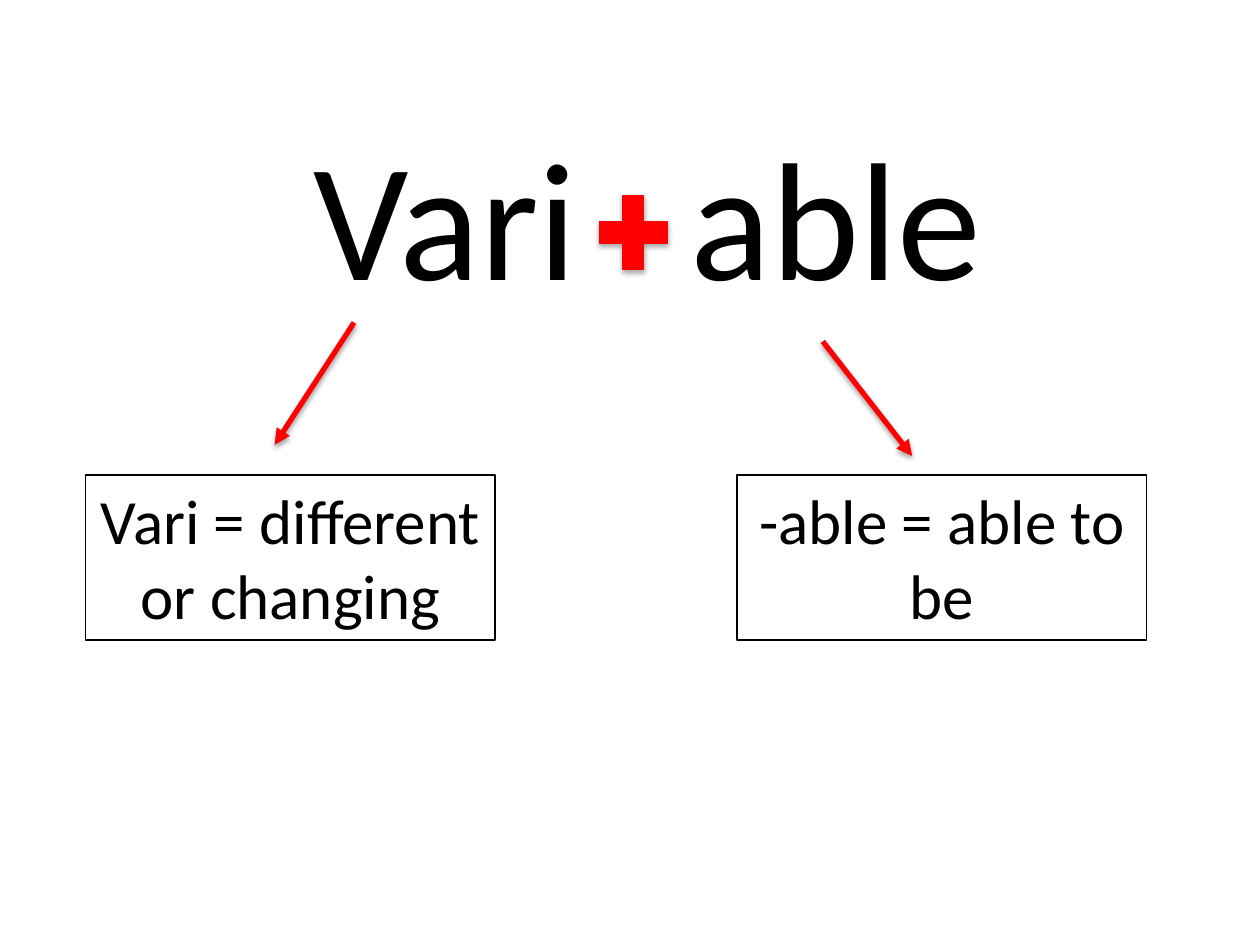
from lxml.etree import SubElement
from pptx import Presentation
from pptx.dml.color import RGBColor
from pptx.enum.shapes import MSO_CONNECTOR, MSO_SHAPE
from pptx.enum.text import MSO_ANCHOR, MSO_AUTO_SIZE, PP_ALIGN
from pptx.oxml.ns import qn
from pptx.util import Inches, Pt

HUES = {"ink": "000000", "mark": "FF0000", "page": "FFFFFF"}
FONT = "Calibri"
CELL = 0.1  # side of a grid cell in inches: 100 columns by 75 rows


def grid(*cells):
    return [Inches(n * CELL) for n in cells]


def hue(name):
    return RGBColor.from_string(HUES[name])


class Board:
    def __init__(self, deck):
        self.slide = deck.slides.add_slide(deck.slide_layouts[5])
        self.slide.background.fill.solid()
        self.slide.background.fill.fore_color.rgb = hue("page")

    def style(self, par, size):
        par.alignment = PP_ALIGN.CENTER
        par.font.name = FONT
        par.font.size = Pt(size)
        par.font.color.rgb = hue("ink")

    def shade(self, shape, dist, alpha):
        props = shape._element.spPr
        glow = SubElement(SubElement(props, qn("a:effectLst")), qn("a:outerShdw"),
                          blurRad="40000", dist=str(dist), dir="5400000", rotWithShape="0")
        tint = SubElement(glow, qn("a:srgbClr"), val=HUES["ink"])
        SubElement(tint, qn("a:alpha"), val=str(alpha * 1000))

    def title(self, parts, gap, area):
        """Join the word parts with one space, widened by gap points."""
        head = self.slide.shapes.title
        head.left, head.top, head.width, head.height = grid(*area)
        frame = head.text_frame
        frame.vertical_anchor = MSO_ANCHOR.MIDDLE
        frame.auto_size = MSO_AUTO_SIZE.NONE
        par = frame.paragraphs[0]
        for text in (parts[0], " ", parts[1]):
            run = par.add_run()
            run.text = text
            if text == " ":
                run.font._element.set("spc", str(gap * 100))
        self.style(par, 96)

    def plus(self, area):
        sign = self.slide.shapes.add_shape(MSO_SHAPE.MATH_PLUS, *grid(*area))
        sign.adjustments[0] = 0.235
        sign.fill.solid()
        sign.fill.fore_color.rgb = hue("mark")
        sign.line.color.rgb = hue("mark")
        sign.line.width = Pt(0.75)
        self.shade(sign, 23000, 35)

    def arrow(self, start, end):
        link = self.slide.shapes.add_connector(MSO_CONNECTOR.STRAIGHT, *grid(*start, *end))
        link.line.color.rgb = hue("mark")
        link.line.width = Pt(3)
        SubElement(link.line._get_or_add_ln(), qn("a:tailEnd"), type="triangle")
        self.shade(link, 20000, 38)

    def box(self, text, area):
        box = self.slide.shapes.add_textbox(*grid(*area))
        box.line.color.rgb = hue("ink")
        box.line.width = Pt(0.75)
        frame = box.text_frame
        frame.word_wrap = True
        frame.auto_size = MSO_AUTO_SIZE.SHAPE_TO_FIT_TEXT
        frame.text = text
        self.style(frame.paragraphs[0], 36)


def main():
    deck = Presentation()
    deck.slide_width, deck.slide_height = grid(100, 75)
    board = Board(deck)

    # The word, split in two by a plus sign
    board.title(("Vari", "able"), 43, (6.4, 10.7, 90, 12.5))
    board.plus((46.6, 14.5, 7.3, 7.9))

    # An arrow from each part to its meaning
    for text, left, start, end in (
        ("Vari = different or changing", 6.8, (28.1, 25.6), (21.8, 35.3)),
        ("-able = able to be", 58.5, (65.3, 27.1), (72.4, 36.2)),
    ):
        board.arrow(start, end)
        board.box(text, (left, 37.7, 32.5, 13.1))

    deck.save("out.pptx")


if __name__ == "__main__":
    main()
